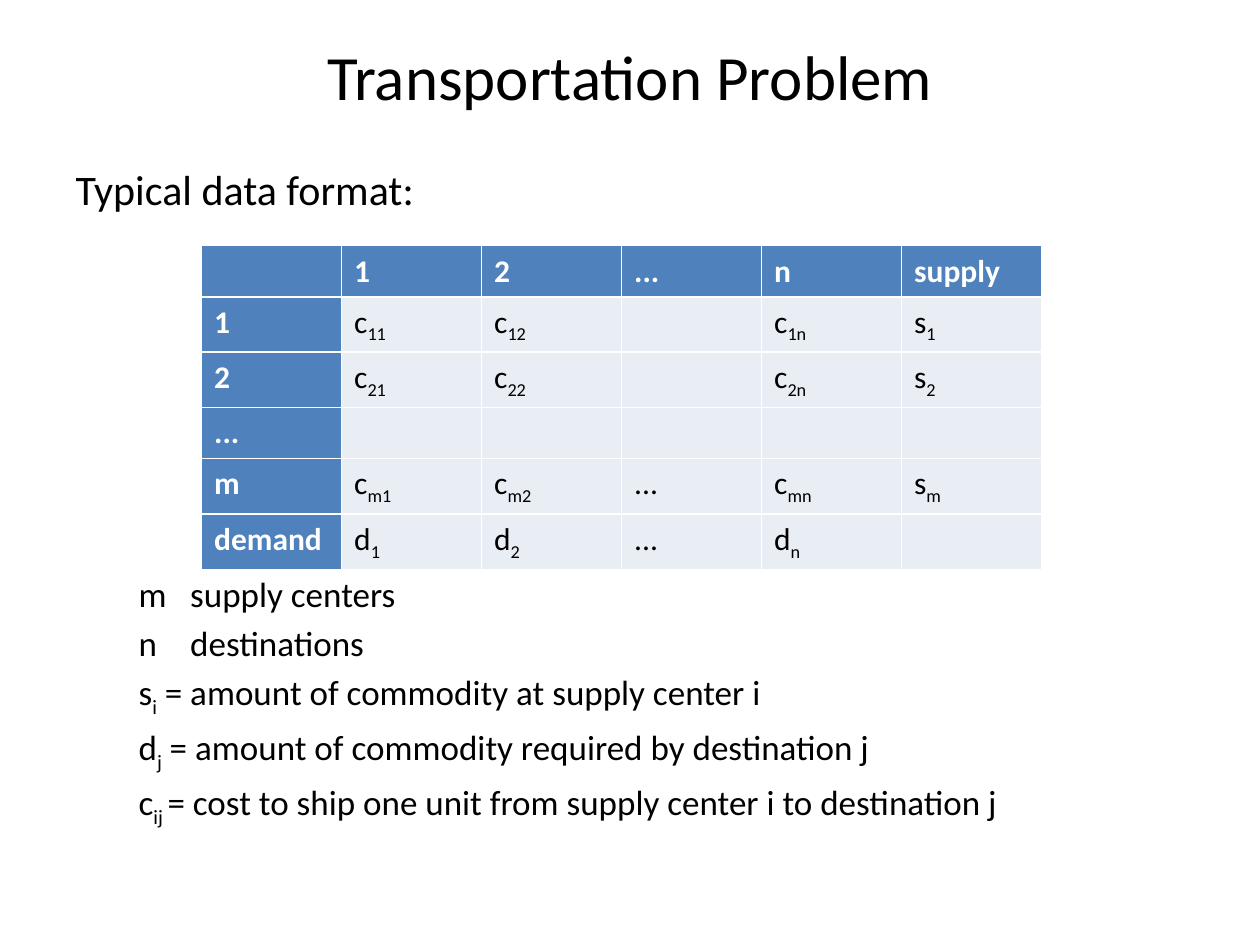
from pptx import Presentation
from pptx import util as u
from pptx.dml.color import RGBColor
from pptx.enum import text
from pptx.oxml import xmlchemy

BLACK = RGBColor(0x00, 0x00, 0x00)
WHITE = RGBColor(0xFF, 0xFF, 0xFF)
HEADER_BLUE = RGBColor(0x4F, 0x81, 0xBD)
PALE_BLUE = RGBColor(0xE9, 0xED, 0xF4)

COSTS = [
    ["", "1", "2", "...", "n", "supply"],
    ["1", "c_11", "c_12", "", "c_1n", "s_1"],
    ["2", "c_21", "c_22", "", "c_2n", "s_2"],
    ["...", "", "", "", "", ""],
    ["m", "c_m1", "c_m2", "...", "c_mn", "s_m"],
    ["demand", "d_1", "d_2", "...", "d_n", ""],
]
LEGEND = [
    "m\tsupply centers",
    "n\tdestinations",
    "s_i_ = amount of commodity at supply center i",
    "d_j_ = amount of commodity required by destination j",
    "c_ij _= cost to ship one unit from supply center i to destination j",
]


def write(paragraph, content, size=18, color=BLACK, bold=False, align=None):
    paragraph.alignment = align
    for index, part in enumerate(content.split("_")):
        if not part:
            continue
        run = paragraph.add_run()
        run.text = part
        run.font.name = "Calibri"
        run.font.size = u.Pt(size)
        run.font.bold = bold
        run.font.color.rgb = color
        if index % 2:
            run.font._element.set("baseline", "-25000")


def hang(paragraph, margin, indent):
    properties = paragraph._p.get_or_add_pPr()
    properties.set("marL", str(u.Inches(margin)))
    properties.set("indent", str(-u.Inches(indent)))
    properties.insert_element_before(
        xmlchemy.OxmlElement("a:buNone"), "a:tabLst", "a:defRPr", "a:extLst")


class SlideBuilder:
    def __init__(self, presentation):
        self.width = presentation.slide_width
        self.height = presentation.slide_height
        self.slide = presentation.slides.add_slide(presentation.slide_layouts[1])

    def box(self, left, top, width, height):
        return (round(left * self.width), round(top * self.height),
                round(width * self.width), round(height * self.height))

    def place(self, shape, area):
        shape.left, shape.top, shape.width, shape.height = self.box(*area)
        shape.text_frame.auto_size = text.MSO_AUTO_SIZE.NONE
        return shape.text_frame

    def title(self, content, area):
        frame = self.place(self.slide.shapes.title, area)
        frame.vertical_anchor = text.MSO_ANCHOR.MIDDLE
        write(frame.paragraphs[0], content, size=36, align=text.PP_ALIGN.CENTER)

    def body(self, heading, lines, area, gap):
        frame = self.place(self.slide.placeholders[1], area)
        write(frame.paragraphs[0], heading, size=24)
        hang(frame.paragraphs[0], 0.38, 0.38)
        for index, line in enumerate(lines):
            paragraph = frame.add_paragraph()
            paragraph.level = 1
            if index == 0:
                paragraph.space_before = u.Pt(gap)
            write(paragraph, line, size=20)
            hang(paragraph, 0.91, 0.41)

    def table(self, rows, area):
        table = self.slide.shapes.add_table(
            len(rows), len(rows[0]), *self.box(*area)).table
        table.first_row = table.first_col = True
        table.horz_banding = False
        for row, values in enumerate(rows):
            for column, value in enumerate(values):
                header = row == 0 or column == 0
                cell = table.cell(row, column)
                cell.fill.solid()
                cell.fill.fore_color.rgb = HEADER_BLUE if header else PALE_BLUE
                write(cell.text_frame.paragraphs[0], value,
                      color=WHITE if header else BLACK, bold=header)


def main():
    presentation = Presentation()
    presentation.slide_width = u.Inches(10)
    presentation.slide_height = u.Inches(7.5)
    builder = SlideBuilder(presentation)
    builder.title("Transportation Problem", (0.05, 0.04, 0.9, 0.08))
    builder.body("Typical data format:", LEGEND, (0.05, 1 / 6, 0.9, 0.73), gap=205)
    builder.table(COSTS, (0.16, 0.26, 2 / 3, 0.32))
    presentation.save("out.pptx")


if __name__ == "__main__":
    main()
